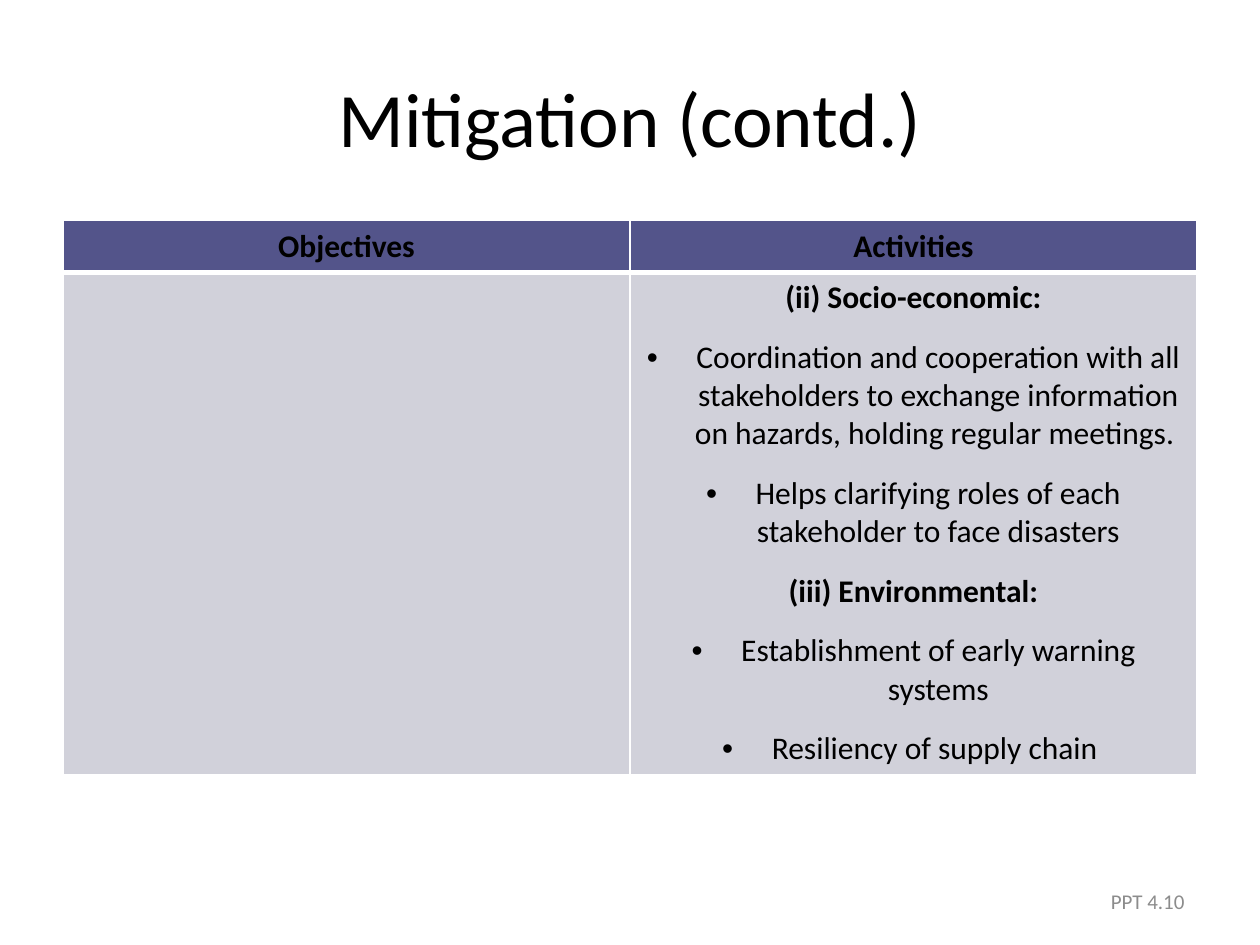
from dataclasses import dataclass

from lxml import etree
from pptx import Presentation
from pptx.dml.color import RGBColor
from pptx.enum import text as t
from pptx.oxml import ns
from pptx.util import Cm, Pt

COLORS = {
    "text": "000000",
    "header": "53548A",
    "body": "D1D1DA",
    "border": "FFFFFF",
    "footer": "8C8C8C",
}
FONT = "Calibri"
INDENT = Cm(1)


@dataclass(frozen=True)
class Line:
    wording: str
    bold: bool = False
    bullet: bool = False
    space_after: float = 0


@dataclass(frozen=True)
class Row:
    height: float
    fill: str
    bottom_border: float
    cells: tuple[tuple[Line, ...], ...]


def heading(wording: str) -> Line:
    return Line(wording, bold=True, space_after=12)


def activity(wording: str) -> Line:
    return Line(wording, bullet=True, space_after=12)


ROWS = (
    Row(1.04, "header", 3, ((Line("Objectives", bold=True),), (Line("Activities", bold=True),))),
    Row(9.98, "body", 1, (
        (),
        (
            heading("(ii) Socio-economic:"),
            activity("Coordination and cooperation with all stakeholders to exchange "
                     "information on hazards, holding regular meetings. "),
            activity("Helps clarifying roles of each stakeholder to face disasters"),
            heading("(iii) Environmental:"),
            activity("Establishment of early warning systems"),
            activity("Resiliency of supply chain "),
        ),
    )),
)


def write(paragraph, wording: str, *, size: float = 18, color: str = "text",
          bold: bool = False, align=t.PP_ALIGN.CENTER, space_after: float = 0,
          bullet: bool = False) -> None:
    paragraph.alignment = align
    paragraph.space_after = Pt(space_after)
    run = paragraph.add_run()
    run.text = wording
    run.font.name = FONT
    run.font.size = Pt(size)
    run.font.bold = bold
    run.font.color.rgb = RGBColor.from_string(COLORS[color])
    if bullet:
        properties = paragraph._p.get_or_add_pPr()
        properties.set("marL", str(INDENT))
        properties.set("indent", str(-INDENT))
        etree.SubElement(properties, ns.qn("a:buFont"), typeface="Arial")
        etree.SubElement(properties, ns.qn("a:buChar"), char="•")


def set_borders(cell, widths: dict[str, float]) -> None:
    """Draw the cell's edges; the schema wants them ahead of the fill."""
    properties = cell._tc.get_or_add_tcPr()
    for position, (side, width) in enumerate(widths.items()):
        edge = etree.Element(ns.qn(f"a:ln{side}"), w=str(Pt(width)))
        fill = etree.SubElement(edge, ns.qn("a:solidFill"))
        etree.SubElement(fill, ns.qn("a:srgbClr"), val=COLORS["border"])
        properties.insert(position, edge)


def fill_cell(cell, lines: tuple[Line, ...], row: Row, top_border: float) -> None:
    cell.fill.solid()
    cell.fill.fore_color.rgb = RGBColor.from_string(COLORS[row.fill])
    set_borders(cell, {"L": 1, "R": 1, "T": top_border, "B": row.bottom_border})
    frame = cell.text_frame
    for index, line in enumerate(lines):
        paragraph = frame.add_paragraph() if index else frame.paragraphs[0]
        write(paragraph, line.wording, bold=line.bold, bullet=line.bullet,
              space_after=line.space_after)


def add_mitigation_table(slide) -> None:
    table = slide.shapes.add_table(
        len(ROWS), len(ROWS[0].cells), Cm(1.27), Cm(4.45), Cm(22.86),
        Cm(sum(row.height for row in ROWS))).table
    top_border = 1
    for row_index, row in enumerate(ROWS):
        table.rows[row_index].height = Cm(row.height)
        for column, lines in enumerate(row.cells):
            fill_cell(table.cell(row_index, column), lines, row, top_border)
        top_border = row.bottom_border


def main() -> None:
    deck = Presentation()
    deck.slide_width, deck.slide_height = Cm(25.4), Cm(19.05)
    slide = deck.slides.add_slide(deck.slide_layouts[5])

    title = slide.shapes.title
    title.left, title.top, title.width, title.height = Cm(1.27), Cm(0.76), Cm(22.86), Cm(3.18)
    title.text_frame.vertical_anchor = t.MSO_ANCHOR.MIDDLE
    write(title.text_frame.paragraphs[0], "Mitigation (contd.)", size=44)

    add_mitigation_table(slide)

    page_label = slide.shapes.add_textbox(Cm(18.2), Cm(17.66), Cm(5.93), Cm(1.01)).text_frame
    page_label.word_wrap = True
    page_label.vertical_anchor = t.MSO_ANCHOR.MIDDLE
    write(page_label.paragraphs[0], "PPT 4.10", size=12, color="footer",
          align=t.PP_ALIGN.RIGHT)

    deck.save("out.pptx")


if __name__ == "__main__":
    main()
